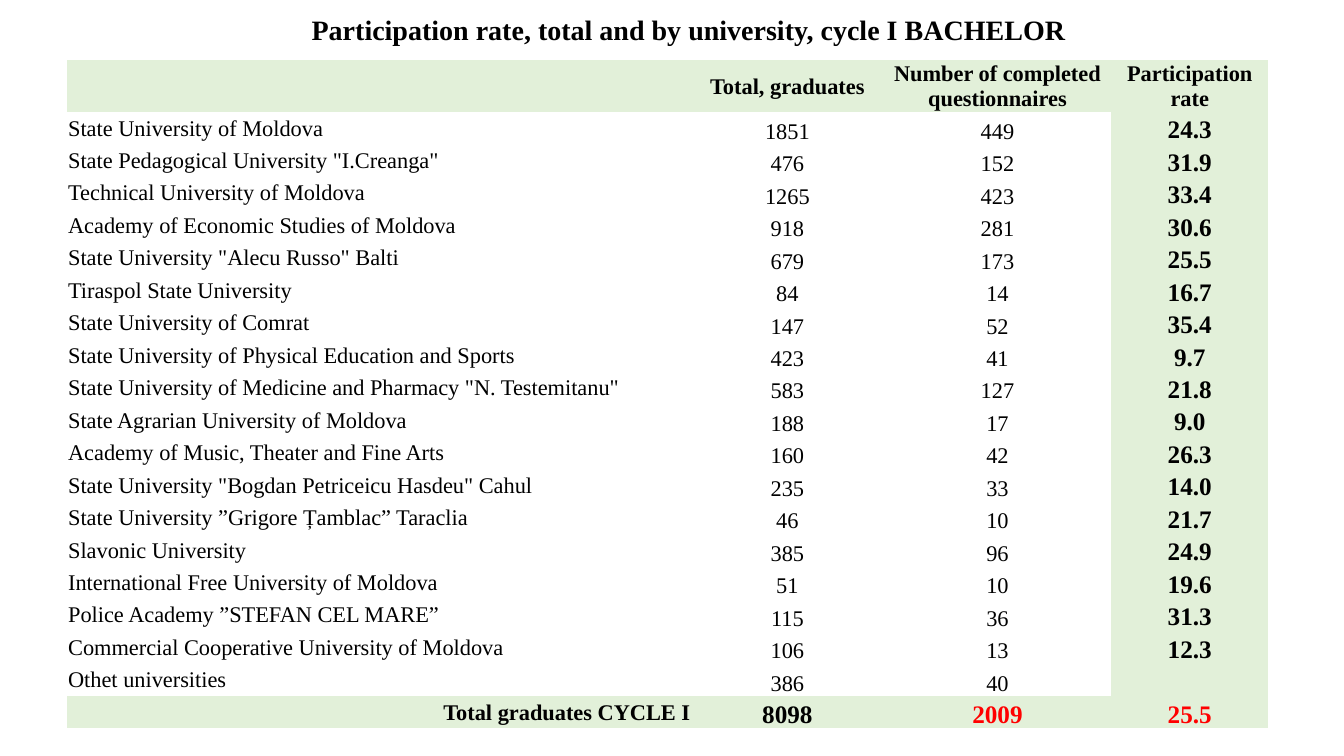
"""Build the slide on participation rates by university, cycle I bachelor."""
from dataclasses import dataclass

from pptx import Presentation
from pptx.dml.color import RGBColor
from pptx.enum.text import MSO_ANCHOR, PP_ALIGN
from pptx.util import Pt

LEFT, CENTER, RIGHT = PP_ALIGN.LEFT, PP_ALIGN.CENTER, PP_ALIGN.RIGHT
MIDDLE, BOTTOM = MSO_ANCHOR.MIDDLE, MSO_ANCHOR.BOTTOM
NO_GRID_STYLE = "{2D5ABB26-0587-4C30-8999-92F81FD0307C}"


@dataclass(frozen=True)
class Theme:
    font: str = "Times New Roman"
    text: RGBColor = RGBColor(0x00, 0x00, 0x00)
    alert: RGBColor = RGBColor(0xFF, 0x00, 0x00)
    band: RGBColor = RGBColor(0xE2, 0xF0, 0xD9)
    title: int = 20
    figure: int = 18
    body: int = 16


theme = Theme()


def format_paragraph(p, size, bold, color, align):
    p.alignment = align
    p.font.name = theme.font
    p.font.size = Pt(size)
    p.font.bold = bold
    p.font.color.rgb = color


rows = [
    ("", "Total, graduates", "Number of completed questionnaires", "Participation rate"),
    ("State University of Moldova", "1851", "449", "24.3"),
    ('State Pedagogical University "I.Creanga"', "476", "152", "31.9"),
    ("Technical University of Moldova", "1265", "423", "33.4"),
    ("Academy of Economic Studies of Moldova", "918", "281", "30.6"),
    ('State University "Alecu Russo" Balti', "679", "173", "25.5"),
    ("Tiraspol State University", "84", "14", "16.7"),
    ("State University of Comrat", "147", "52", "35.4"),
    ("State University of Physical Education and Sports", "423", "41", "9.7"),
    ('State University of Medicine and Pharmacy "N. Testemitanu"', "583", "127", "21.8"),
    ("State Agrarian University of Moldova", "188", "17", "9.0"),
    ("Academy of Music, Theater and Fine Arts", "160", "42", "26.3"),
    ('State University "Bogdan Petriceicu Hasdeu" Cahul', "235", "33", "14.0"),
    ("State University ”Grigore Țamblac” Taraclia", "46", "10", "21.7"),
    ("Slavonic University", "385", "96", "24.9"),
    ("International Free University of Moldova", "51", "10", "19.6"),
    ("Police Academy ”STEFAN CEL MARE”", "115", "36", "31.3"),
    ("Commercial Cooperative University of Moldova", "106", "13", "12.3"),
    ("Othet universities", "386", "40", ""),
    ("Total graduates CYCLE I", "8098", "2009", "25.5"),
]
col_widths = (445.7, 137.5, 162.7, 112)
header_height, row_height = 36.6, 23.2

prs = Presentation()
prs.slide_width, prs.slide_height = Pt(960), Pt(540)
s = prs.slides.add_slide(prs.slide_layouts[5])

title = s.shapes.title
title.left, title.top, title.width, title.height = Pt(78), Pt(6.5), Pt(828), Pt(31.5)
tf = title.text_frame
tf.text = "Participation rate, total and by university, cycle I BACHELOR"
tf.vertical_anchor = MIDDLE
tf.paragraphs[0].line_spacing = 0.9
format_paragraph(tf.paragraphs[0], theme.title, True, theme.text, CENTER)

table_height = header_height + row_height * (len(rows) - 1)
frame = s.shapes.add_table(len(rows), len(col_widths), Pt(48), Pt(43.2),
                           Pt(sum(col_widths)), Pt(table_height))
table = frame.table
table.horz_banding = False
table._tbl.tblPr[0].text = NO_GRID_STYLE
for column, width in zip(table.columns, col_widths):
    column.width = Pt(width)

for i, values in enumerate(rows):
    is_header, is_total = i == 0, i == len(rows) - 1
    table.rows[i].height = Pt(header_height if is_header else row_height)
    for j, value in enumerate(values):
        is_name, is_rate = j == 0, j == 3
        cell = table.cell(i, j)
        cell.text = value
        cell.margin_left = cell.margin_right = cell.margin_top = Pt(0.7)
        cell.margin_bottom = 0
        cell.vertical_anchor = MIDDLE if is_header or is_name else BOTTOM
        if is_header or is_total or is_rate:
            cell.fill.solid()
            cell.fill.fore_color.rgb = theme.band
        else:
            cell.fill.background()
        is_large = not is_header and (is_rate or is_total and not is_name)
        name_align = RIGHT if is_total else LEFT
        format_paragraph(
            cell.text_frame.paragraphs[0],
            theme.figure if is_large else theme.body,
            is_header or is_total or is_rate,
            theme.alert if is_total and j >= 2 else theme.text,
            name_align if is_name else CENTER,
        )

prs.save("out.pptx")
